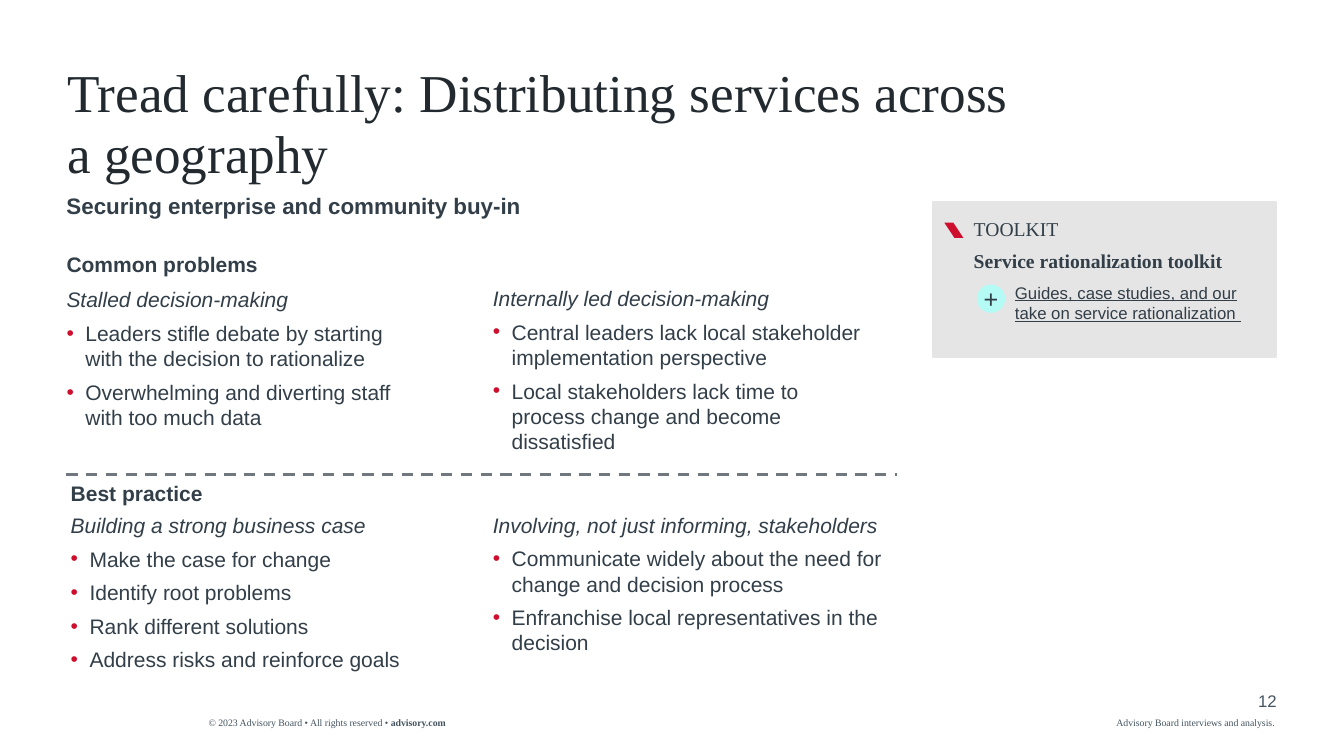
from dataclasses import dataclass

from lxml import etree
from pptx import Presentation
from pptx.dml.color import RGBColor
from pptx.enum.dml import MSO_LINE
from pptx.enum.shapes import MSO_CONNECTOR, MSO_SHAPE
from pptx.enum.text import MSO_ANCHOR, PP_ALIGN
from pptx.oxml.ns import qn
from pptx.util import Pt

DASH = MSO_LINE.DASH
STRAIGHT = MSO_CONNECTOR.STRAIGHT
RECT, OVAL, SLANT = MSO_SHAPE.RECTANGLE, MSO_SHAPE.OVAL, MSO_SHAPE.PARALLELOGRAM
TOP, MIDDLE = MSO_ANCHOR.TOP, MSO_ANCHOR.MIDDLE
LEFT, CENTER, RIGHT = PP_ALIGN.LEFT, PP_ALIGN.CENTER, PP_ALIGN.RIGHT


@dataclass(frozen=True)
class Theme:
    """Colours, fonts and type sizes of the slide."""
    title: str = "222A30"
    text: str = "323E48"
    footer: str = "445460"
    accent: str = "CE0E2D"
    panel: str = "E5E5E5"
    badge: str = "B4FBF6"
    rule: str = "70787E"
    sans: str = "Arial"
    serif: str = "Times New Roman"
    title_size: int = 38
    subtitle_size: int = 16
    body_size: int = 15
    toolkit_size: int = 14
    link_size: int = 12
    badge_size: int = 18
    footer_size: int = 7


THEME = Theme()


def rgb(color):
    """Return the colour object for a hex string."""
    return RGBColor.from_string(color)


def style(font, size, name=THEME.sans, color=THEME.text, **flags):
    """Set size, typeface, colour and any flags of a font."""
    font.size = Pt(size)
    font.name = name
    font.color.rgb = rgb(color)
    for flag, value in flags.items():
        setattr(font, flag, value)


def set_frame(tf, anchor=TOP):
    """Remove the insets of a text frame and set its anchor."""
    tf.margin_left = tf.margin_right = tf.margin_top = tf.margin_bottom = 0
    tf.vertical_anchor = anchor
    tf.word_wrap = True


def add_text(slide, box, lines, size, align=LEFT, **font):
    """Add a text box with one paragraph per line and return its paragraphs."""
    tf = slide.shapes.add_textbox(*map(Pt, box)).text_frame
    set_frame(tf)
    for i, line in enumerate(lines):
        p = tf.add_paragraph() if i else tf.paragraphs[0]
        p.text = line
        p.alignment = align
        if i:
            p.space_before = Pt(6)
        for r in p.runs:
            style(r.font, size, **font)
    return tf.paragraphs


def add_bullet(p):
    """Give a paragraph a red bullet with a hanging indent."""
    pPr = p._p.get_or_add_pPr()
    pPr.set("marL", str(Pt(13.5)))
    pPr.set("indent", str(-Pt(13.5)))
    color = etree.SubElement(pPr, qn("a:buClr"))
    etree.SubElement(color, qn("a:srgbClr"), val=THEME.accent)
    etree.SubElement(pPr, qn("a:buFont"), typeface=THEME.sans)
    etree.SubElement(pPr, qn("a:buChar"), char="•")


def add_panel(slide, kind, box, color, line=True):
    """Add a filled shape, with an outline of the same colour if wanted."""
    sp = slide.shapes.add_shape(kind, *map(Pt, box))
    sp.shadow.inherit = False
    sp.fill.solid()
    sp.fill.fore_color.rgb = rgb(color)
    if line:
        sp.line.color.rgb = rgb(color)
        sp.line.width = Pt(1.5)
    else:
        sp.line.fill.background()
    return sp


def add_header(slide, x, y, w):
    """Place the title and the subtitle."""
    title = "Tread carefully: Distributing services across\va geography"
    p, = add_text(slide, (x, y, w, 84), [title], THEME.title_size,
                  name=THEME.serif, color=THEME.title)
    p.line_spacing = 0.95
    add_text(slide, (x - 0.5, y + 91.5, 451, 19),
             ["Securing enterprise and community buy-in"],
             THEME.subtitle_size, bold=True)


def add_heading(slide, x, y, text):
    """Place a bold section heading."""
    add_text(slide, (x, y, 157, 18), [text], THEME.body_size, bold=True)


def add_topic(slide, x, y, w, h, heading, points):
    """Place an italic heading with its bullet points."""
    first, *rest = add_text(slide, (x, y, w, h), [heading, *points], THEME.body_size)
    first.runs[0].font.italic = True
    for p in rest:
        add_bullet(p)


def add_divider(slide, x, y, w):
    """Place the dashed rule between the two sections."""
    ln = slide.shapes.add_connector(STRAIGHT, Pt(x), Pt(y), Pt(x + w), Pt(y))
    ln.line.color.rgb = rgb(THEME.rule)
    ln.line.width = Pt(2)
    ln.line.dash_style = DASH
    etree.SubElement(ln._element.spPr, qn("a:effectLst"))


def add_toolkit(slide, x, y, w, h):
    """Place the grey toolkit panel with its marker and link."""
    add_panel(slide, RECT, (x, y, w, h), THEME.panel)
    marker = add_panel(slide, SLANT, (x + 8, y + 15, 13.7, 11), THEME.accent, line=False)
    marker.adjustments[0] = 0.66
    marker._element.spPr.get_or_add_xfrm().set("flipH", "1")
    _, name = add_text(slide, (x + 29, y + 11, 184, 40),
                       ["TOOLKIT", "Service rationalization toolkit"],
                       THEME.toolkit_size, name=THEME.serif)
    name.runs[0].font.bold = True
    badge = add_panel(slide, OVAL, (x + 32, y + 60, 18.7, 18.7), THEME.badge)
    tf = badge.text_frame
    tf.text = "+"
    set_frame(tf, MIDDLE)
    tf.word_wrap = False
    tf.paragraphs[0].alignment = CENTER
    style(tf.paragraphs[0].runs[0].font, THEME.badge_size)
    add_text(slide, (x + 58.5, y + 57.6, 180, 29),
             ["Guides, case studies, and our take on service rationalization "],
             THEME.link_size, underline=True)


def add_footer(slide, x, y, w):
    """Place the copyright line, the source line and the page number."""
    font = {"color": THEME.footer, "name": THEME.serif}
    p, = add_text(slide, (x, y, 235, 9),
                  ["© 2023 Advisory Board • All rights reserved • "],
                  THEME.footer_size, **font)
    r = p.add_run()
    r.text = "advisory.com"
    style(r.font, THEME.footer_size, bold=True, **font)
    add_text(slide, (x + w - 114.5, y, 116, 9),
             ["Advisory Board interviews and analysis."], THEME.footer_size, **font)
    add_text(slide, (x + w - 36, y - 18.7, 36, 14), ["12"], THEME.link_size,
             align=RIGHT, color=THEME.footer)


def main():
    """Build the slide and save it."""
    prs = Presentation()
    prs.slide_width, prs.slide_height = Pt(960), Pt(540)
    slide = prs.slides.add_slide(prs.slide_layouts[6])
    add_header(slide, 48, 46, 864)
    add_heading(slide, 47.5, 180, "Common problems")
    add_topic(slide, 47.5, 205, 242, 103, "Stalled decision-making", [
        "Leaders stifle debate by starting with the decision to rationalize",
        "Overwhelming and diverting staff with too much data"])
    add_topic(slide, 352, 204, 274, 121, "Internally led decision-making", [
        "Central leaders lack local stakeholder implementation perspective",
        "Local stakeholders lack time to process change and become dissatisfied"])
    add_divider(slide, 47.5, 338.7, 593)
    add_heading(slide, 50.5, 343.5, "Best practice")
    add_topic(slide, 50.5, 366, 277, 115, "Building a strong business case", [
        "Make the case for change", "Identify root problems",
        "Rank different solutions", "Address risks and reinforce goals"])
    add_topic(slide, 352, 366, 289, 103, "Involving, not just informing, stakeholders", [
        "Communicate widely about the need for change and decision process",
        "Enfranchise local representatives in the decision"])
    add_toolkit(slide, 666.5, 144, 245, 111)
    add_footer(slide, 149, 512, 763)
    prs.save("out.pptx")


if __name__ == "__main__":
    main()
